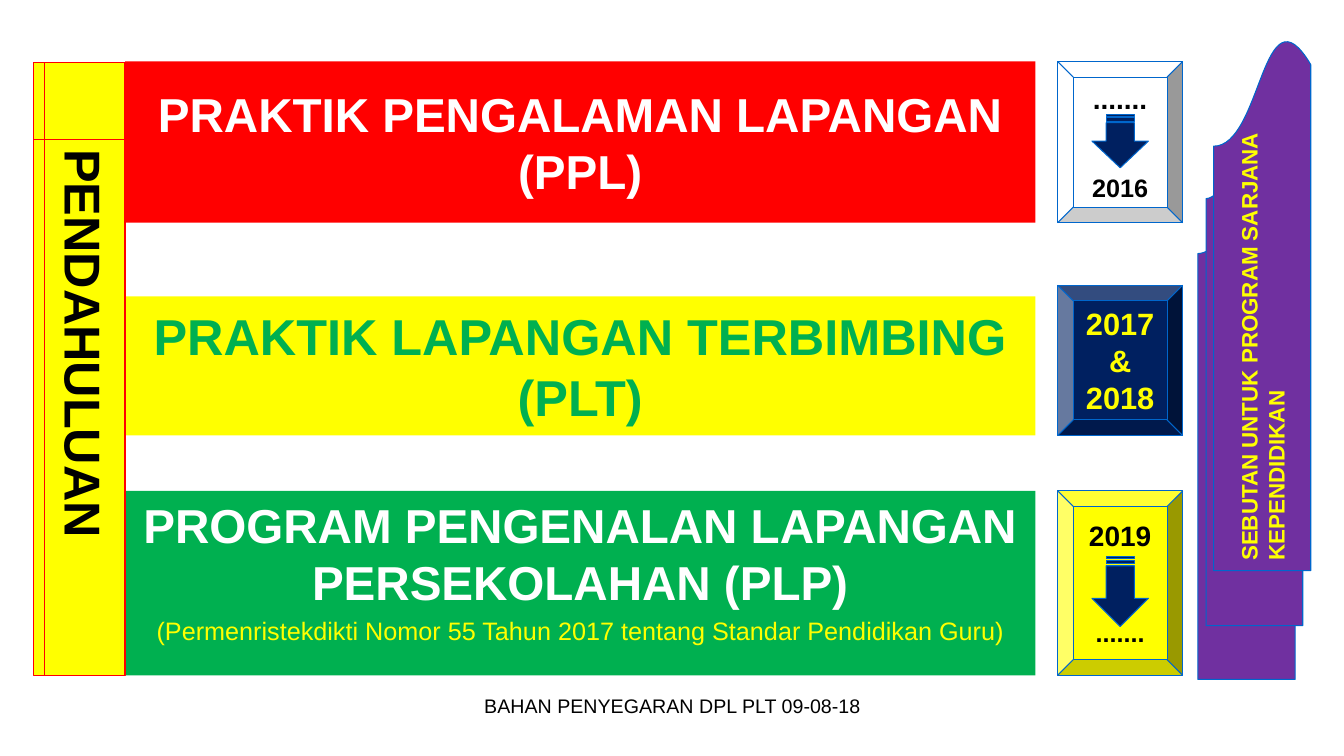
import pptx
import pptx.util
import pptx.dml.color
import pptx.enum.shapes
import pptx.enum.text

Inch = pptx.util.Inches
Pt = pptx.util.Pt
Kind = pptx.enum.shapes.MSO_SHAPE
Side = pptx.enum.text.PP_ALIGN
Hold = pptx.enum.text.MSO_ANCHOR

hues = {"white": "FFFFFF", "black": "000000", "red": "FF0000",
        "green": "00B050", "yellow": "FFFF00", "navy": "002060",
        "blue": "0066CC", "purple": "7030A0"}

deck = pptx.Presentation()
deck.slide_width, deck.slide_height = Inch(13.33), Inch(7.5)
slide = deck.slides.add_slide(deck.slide_layouts[6])

# Columns as (left, width), rows as (top, height)
bar, band, date, tower = (0.33, 0.91), (1.24, 9.03), (10.49, 1.24), (11.88, 1.12)
rows = [(0.61, 1.6), (2.94, 1.38), (4.87, 1.83)]


def draw(kind, col, row, fill, edge=None, turn=0):
    shape = slide.shapes.add_shape(kind, Inch(col[0]), Inch(row[0]),
                                   Inch(col[1]), Inch(row[1]))
    shape.shadow.inherit = False
    shape.rotation = turn
    shape.fill.solid()
    shape.fill.fore_color.rgb = pptx.dml.color.RGBColor.from_string(hues[fill])
    if edge:
        shape.line.color.rgb = pptx.dml.color.RGBColor.from_string(hues[edge])
        shape.line.width = Pt(0.75)
    else:
        shape.line.fill.background()
    return shape


def write(shape, lines, side=Side.CENTER, hold=Hold.MIDDLE, wrap=True, down=False):
    """Each line is (text, size, hue, bold, space before)."""
    frame = shape.text_frame
    frame.word_wrap = wrap
    frame.vertical_anchor = hold
    if down:
        frame._txBody.bodyPr.set("vert", "eaVert")
    for i, (text, size, hue, bold, gap) in enumerate(lines):
        para = frame.paragraphs[0] if i == 0 else frame.add_paragraph()
        para.text = text
        para.alignment = side
        para.space_before = Pt(gap)
        para.font.name = "Arial"
        para.font.size = Pt(size)
        para.font.bold = bold
        para.font.color.rgb = pptx.dml.color.RGBColor.from_string(hues[hue])


# Programme bands
bands = [
    ("red", Hold.MIDDLE,
     [("PRAKTIK PENGALAMAN LAPANGAN (PPL)", 34, "white", True, 0)]),
    ("yellow", Hold.MIDDLE,
     [("PRAKTIK LAPANGAN TERBIMBING (PLT)", 36, "green", True, 0)]),
    ("green", Hold.TOP,
     [("PROGRAM PENGENALAN LAPANGAN PERSEKOLAHAN (PLP)", 34, "white", True, 0),
      ("(Permenristekdikti Nomor 55 Tahun 2017 tentang Standar Pendidikan Guru)",
       18, "yellow", False, 3.6)]),
]
for row, (fill, hold, lines) in zip(rows, bands):
    write(draw(Kind.RECTANGLE, band, row, fill), lines, hold=hold)

# Year frames
years = [
    (rows[0], "white", [(".......", 20, "black", True, 0),
                        ("2016", 18, "black", True, 41)]),
    ((2.83, 1.49), "navy", [(word, 22, "yellow", True, 0)
                            for word in ("2017", "&", "2018")]),
    (rows[2], "yellow", [("2019", 20, "black", True, 0),
                         (".......", 18, "black", True, 46)]),
]
for row, fill, lines in years:
    write(draw(Kind.BEVEL, date, row, fill, "blue"), lines, wrap=False)

# Down arrows, centred on the year frames
mid = date[0] + date[1] / 2
for top, size in [(1.12, 0.53), (5.59, 0.69)]:
    draw(Kind.STRIPED_RIGHT_ARROW, (mid - size / 2, size),
         (top, 0.56), "navy", "blue", 90)

# Upright labels at both edges
stack = draw(Kind.FLOWCHART_MULTIDOCUMENT, tower, (0.4, 6.34), "purple", "blue", 180)
write(stack, [(word, 16, "yellow", True, 0) for word in
              ("SEBUTAN UNTUK PROGRAM SARJANA", "KEPENDIDIKAN")],
      Side.LEFT, wrap=False, down=True)
spine = draw(Kind.FLOWCHART_INTERNAL_STORAGE, bar, (0.62, 6.08), "yellow", "red")
write(spine, [("PENDAHULUAN", 36, "black", True, 0)],
      Side.LEFT, wrap=False, down=True)

# Footer
foot = slide.shapes.add_textbox(Inch(4.56), Inch(6.83), Inch(4.22), Inch(0.52))
write(foot, [("BAHAN PENYEGARAN DPL PLT 09-08-18", 14, "black", False, 0)],
      hold=Hold.TOP)

deck.save("out.pptx")
